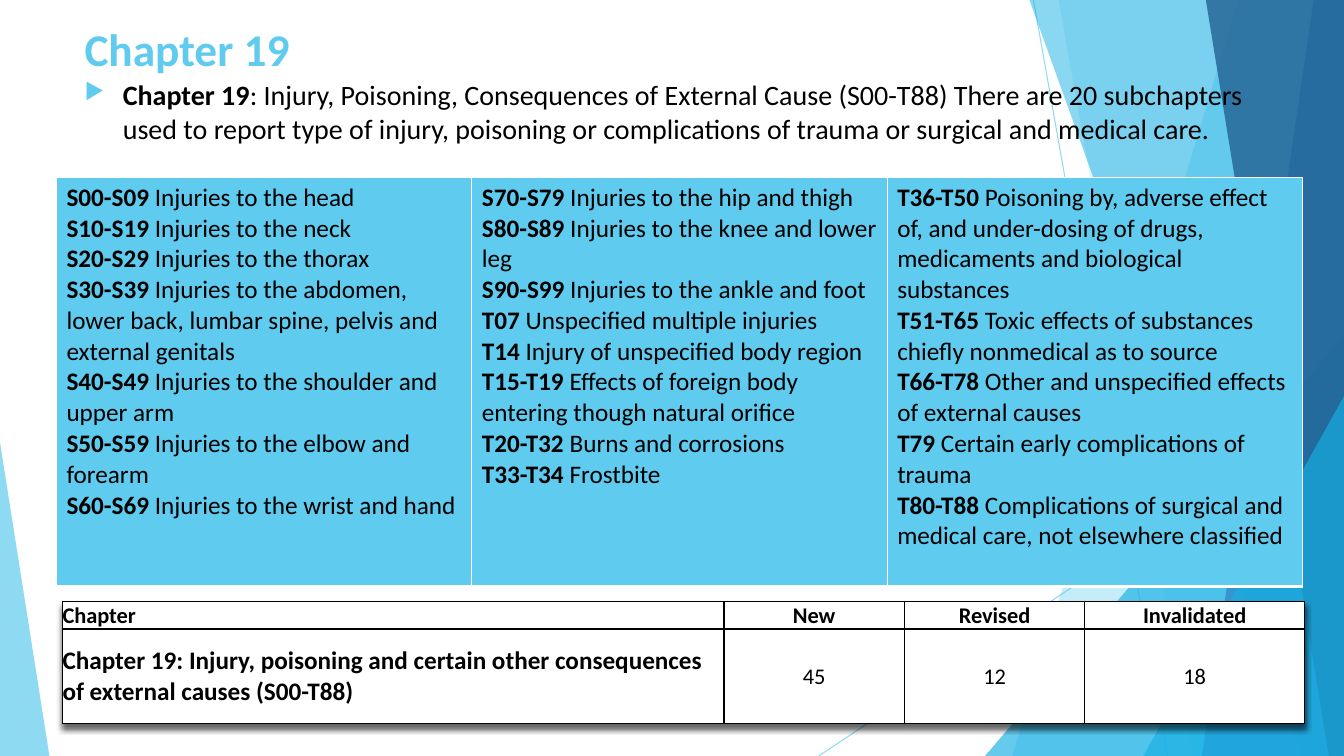
"""Build the Chapter 19 slide with its code groups and count table."""
import pptx
import pptx.util
import pptx.dml.color
import pptx.enum.shapes
import pptx.enum.text
import pptx.oxml
import pptx.oxml.ns
from pptx.util import Inches

THEME = {
    "font": "Calibri", "title": 32.4, "lead": 20, "body": 18, "small": 16,
    "sky": "5FCBEF", "cyan": "17B0E4", "blue": "2E83C3", "navy": "226292",
    "black": "000000", "white": "FFFFFF",
}
TITLE = "Chapter 19"
LEAD = (": Injury, Poisoning, Consequences of External Cause (S00-T88) There are 20 subchapters "
        "used to report type of injury, poisoning or complications of trauma or surgical and medical care.")
GROUPS = [
    [("S00-S09", "Injuries to the head"),
     ("S10-S19", "Injuries to the neck"),
     ("S20-S29", "Injuries to the thorax"),
     ("S30-S39", "Injuries to the abdomen, lower back, lumbar spine, pelvis and external genitals"),
     ("S40-S49", "Injuries to the shoulder and upper arm"),
     ("S50-S59", "Injuries to the elbow and forearm"),
     ("S60-S69", "Injuries to the wrist and hand")],
    [("S70-S79", "Injuries to the hip and thigh"),
     ("S80-S89", "Injuries to the knee and lower leg"),
     ("S90-S99", "Injuries to the ankle and foot"),
     ("T07", "Unspecified multiple injuries"),
     ("T14", "Injury of unspecified body region"),
     ("T15-T19", "Effects of foreign body entering though natural orifice"),
     ("T20-T32", "Burns and corrosions"),
     ("T33-T34", "Frostbite")],
    [("T36-T50", "Poisoning by, adverse effect of, and under-dosing of drugs, medicaments and biological substances"),
     ("T51-T65", "Toxic effects of substances chiefly nonmedical as to source"),
     ("T66-T78", "Other and unspecified effects of external causes"),
     ("T79", "Certain early complications of trauma"),
     ("T80-T88", "Complications of surgical and medical care, not elsewhere classified")],
]
COUNTS = [
    ["Chapter", "New", "Revised", "Invalidated"],
    ["Chapter 19: Injury, poisoning and certain other consequences of external causes (S00-T88)",
     "45", "12", "18"],
]
WIDE, HIGH = 13.33, 7.5
RAYS = [((10.25, 0), (11.58, HIGH)), ((WIDE, 4.03), (8.12, HIGH))]
SHARDS = [
    ("sky", 36, (12.28, 10.04)),
    ("sky", 20, (10.5, 11.83)),
    ("cyan", 66, (9.77, 3.33, 3.56, 1)),
    ("cyan", 50, (10.21, 12.91)),
    ("blue", 70, (13.03, 11.92)),
    ("navy", 80, (11.96, 13.18)),
    ("cyan", 66, (11.34, 3.93, 1.99, 1)),
    ("sky", 70, (0, 4.39, 0.49, 0)),
]


def hue(name):
    return pptx.dml.color.RGBColor.from_string(THEME[name])


def node(xml):
    return pptx.oxml.parse_xml(xml.replace(">", f" {pptx.oxml.ns.nsdecls('a')}>", 1))


def fade(shape, part):
    for color in shape.element.spPr.iter(pptx.oxml.ns.qn("a:srgbClr")):
        color.append(node(f'<a:alpha val="{part * 1000}"></a:alpha>'))


def write(frame, paras, size="body", color="black", align="LEFT", anchor="TOP", inset=(0.1, 0.05)):
    frame.word_wrap = True
    if hasattr(frame, "vertical_anchor"):
        frame.vertical_anchor = pptx.enum.text.MSO_ANCHOR[anchor]
    frame.margin_left = frame.margin_right = Inches(inset[0])
    frame.margin_top = frame.margin_bottom = Inches(inset[1])
    for i, runs in enumerate(paras):
        para = frame.add_paragraph() if i else frame.paragraphs[0]
        para.alignment = pptx.enum.text.PP_ALIGN[align]
        for text, bold in runs:
            run = para.add_run()
            run.text = text
            run.font.name, run.font.bold = THEME["font"], bold
            run.font.size = pptx.util.Pt(THEME[size])
            run.font.color.rgb = hue(color)


def draw_back(slide):
    for start, end in RAYS:
        ray = slide.shapes.add_connector(pptx.enum.shapes.MSO_CONNECTOR.STRAIGHT,
                                         *map(Inches, start + end))
        ray.line.color.rgb, ray.line.width = hue("sky"), pptx.util.Pt(0.75)
        fade(ray, 70)
        ray.element.spPr.append(node("<a:effectLst></a:effectLst>"))
    for color, part, form in SHARDS:
        if len(form) == 2:
            top, foot = form
            path = slide.shapes.build_freeform(Inches(top), 0)
            path.add_line_segments([(Inches(x), Inches(y)) for x, y in
                                    [(WIDE, 0), (WIDE, HIGH), (foot, HIGH)]])
            shard = path.convert_to_shape()
        else:
            left, top, width, peak = form
            shard = slide.shapes.add_shape(pptx.enum.shapes.MSO_SHAPE.ISOSCELES_TRIANGLE,
                                           *map(Inches, (left, top, width, HIGH - top)))
            shard.adjustments[0] = peak
        shard.shadow.inherit = False
        shard.line.fill.background()
        shard.fill.solid()
        shard.fill.fore_color.rgb = hue(color)
        fade(shard, part)


def add_box(slide, place, runs, **look):
    frame = slide.shapes.add_textbox(*map(Inches, place)).text_frame
    write(frame, [runs], **look)
    return frame.paragraphs[0]


def add_grid(slide, left, top, cols, rows):
    place = map(Inches, (left, top, sum(cols), sum(rows)))
    grid = slide.shapes.add_table(len(rows), len(cols), *place).table
    grid.first_row = grid.horz_banding = False
    for col, width in zip(grid.columns, cols):
        col.width = Inches(width)
    for row, height in zip(grid.rows, rows):
        row.height = Inches(height)
    return grid


def paint(cell, fill, edge, foot=1):
    cell.fill.solid()
    cell.fill.fore_color.rgb = hue(fill)
    for i, (side, width) in enumerate(zip("LRTB", (1, 1, 1, foot))):
        cell._tc.get_or_add_tcPr().insert(i, node(
            f'<a:ln{side} w="{width * 12700}"><a:solidFill><a:srgbClr val="{THEME[edge]}"/>'
            f'</a:solidFill></a:ln{side}>'))


def add_counts(slide):
    grid = add_grid(slide, 0.62, 5.97, [6.56, 1.79, 1.79, 2.18], [0.27, 0.94])
    grid._tbl.tblPr.insert(0, node(
        '<a:effectLst><a:outerShdw blurRad="50800" dist="38100" dir="5400000">'
        f'<a:srgbClr val="{THEME["black"]}"><a:alpha val="60000"/></a:srgbClr>'
        '</a:outerShdw></a:effectLst>'))
    for r, row in enumerate(COUNTS):
        for c, text in enumerate(row):
            cell = grid.cell(r, c)
            paint(cell, "white", "black")
            cell.vertical_anchor = pptx.enum.text.MSO_ANCHOR.MIDDLE
            cell.margin_left = cell.margin_right = cell.margin_top = cell.margin_bottom = 0
            write(cell.text_frame, [[(text, r == 0 or c == 0)]], anchor="MIDDLE", inset=(0, 0),
                  size="body" if r and not c else "small", align="CENTER" if c else "LEFT")


def add_groups(slide):
    grid = add_grid(slide, 0.56, 1.76, [4.12] * len(GROUPS), [4.06])
    for cell, group in zip(grid.rows[0].cells, GROUPS):
        paint(cell, "sky", "white", foot=3)
        write(cell.text_frame, [[(code, True), (" " + name, False)] for code, name in group])
        cell.vertical_anchor = pptx.enum.text.MSO_ANCHOR.TOP


def main():
    deck = pptx.Presentation()
    deck.slide_width, deck.slide_height = Inches(WIDE), Inches(HIGH)
    slide = deck.slides.add_slide(deck.slide_layouts[6])
    draw_back(slide)
    add_box(slide, (0.74, 0.13, 9.4, 0.67), [(TITLE, True)],
            size="title", color="sky", anchor="BOTTOM")
    lead = add_box(slide, (0.74, 0.72, 12.07, 4.19), [(TITLE, True), (LEAD, False)], size="lead")
    lead.space_before = pptx.util.Pt(10)
    props = lead._p.get_or_add_pPr()
    props.set("marL", str(Inches(0.38)))
    props.set("indent", str(-Inches(0.38)))
    for xml in (f'<a:buClr><a:srgbClr val="{THEME["sky"]}"/></a:buClr>',
                '<a:buSzPct val="80000"></a:buSzPct>', '<a:buChar char="▶"></a:buChar>'):
        props.append(node(xml))
    add_counts(slide)
    add_groups(slide)
    deck.save("out.pptx")


if __name__ == "__main__":
    main()
